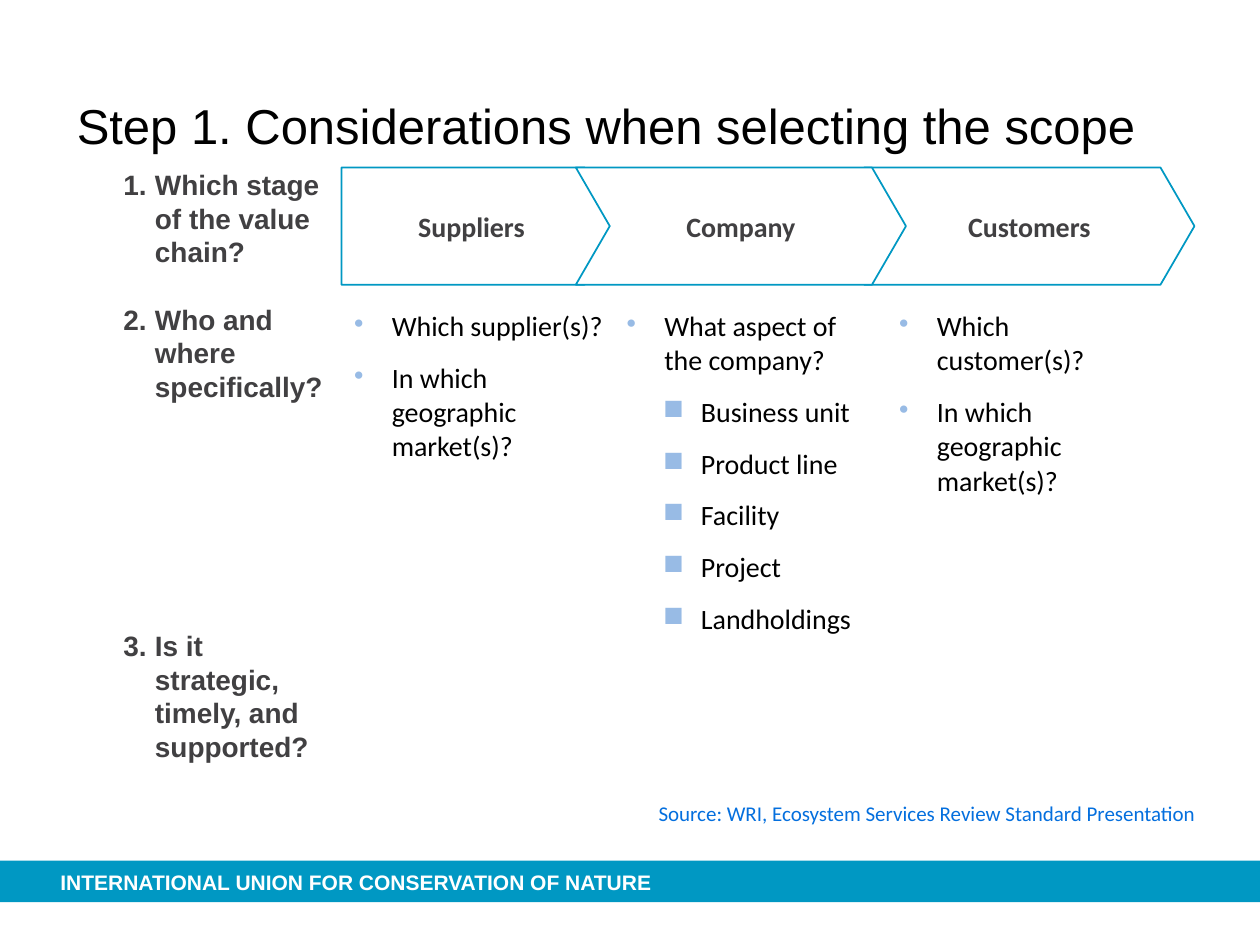
import pptx
import pptx.util
import pptx.dml.color
import pptx.enum.shapes
import pptx.enum.text
import pptx.oxml.ns
import lxml.etree
from dataclasses import dataclass

Pt = pptx.util.Pt
Shape = pptx.enum.shapes.MSO_SHAPE
Align = pptx.enum.text.PP_ALIGN
Anchor = pptx.enum.text.MSO_ANCHOR


@dataclass(frozen=True)
class Theme:
    blue: str = "0098C3"
    pale: str = "98BBE5"
    link: str = "046FDE"
    gray: str = "414042"
    black: str = "000000"
    white: str = "FFFFFF"
    head: str = "Arial"
    body: str = "Calibri"
    big: int = 28
    mid: int = 16
    small: int = 12


def rgb(hue):
    return pptx.dml.color.RGBColor.from_string(hue)


def grid(*cells):
    return [pptx.util.Inches(cell / 10) for cell in cells]


def apply(item, values):
    for name, value in values.items():
        setattr(item, name, value)


class Deck:
    def __init__(self, theme, cols, rows):
        self.theme = theme
        self.prs = pptx.Presentation()
        self.prs.slide_width, self.prs.slide_height = grid(cols, rows)
        self.slide = self.prs.slides.add_slide(self.prs.slide_layouts[6])

    def label(self, para, words, face, size, hue, bold=False):
        run = para.add_run()
        run.text = words
        apply(run.font, {"name": face, "size": Pt(size), "bold": bold})
        run.font.color.rgb = rgb(hue)

    def indent(self, para, left, hang):
        props = para._p.get_or_add_pPr()
        props.set("marL", str(grid(left)[0]))
        props.set("indent", str(-grid(hang)[0]))
        return props

    def frame(self, frame, anchor):
        apply(frame, {"word_wrap": True, "vertical_anchor": anchor,
                      "margin_left": 0, "margin_right": 0,
                      "margin_top": 0, "margin_bottom": 0})
        return frame.paragraphs[0]

    def text(self, place, words, *style, align=Align.LEFT, anchor=Anchor.TOP):
        box = self.slide.shapes.add_textbox(*grid(*place))
        para = self.frame(box.text_frame, anchor)
        para.alignment = align
        self.label(para, words, *style)
        return para

    def shape(self, kind, place, fill, line=None):
        item = self.slide.shapes.add_shape(kind, *grid(*place))
        item.shadow.inherit = False
        item.fill.solid()
        item.fill.fore_color.rgb = rgb(fill)
        if line:
            item.line.color.rgb = rgb(line)
            item.line.width = Pt(1)
        else:
            item.line.fill.background()
        return item

    def stage(self, kind, place, words):
        look = self.theme
        item = self.shape(kind, place, look.white, look.blue)
        item.adjustments[0] = 0.29
        para = self.frame(item.text_frame, Anchor.MIDDLE)
        para.alignment = Align.CENTER
        self.label(para, words, look.body, look.mid, look.gray, True)

    def ask(self, row, high, number, words):
        look = self.theme
        para = self.text((9.8, row, 16.1, high), f"{number}. \t{words}",
                         look.head, look.mid, look.gray, True)
        self.indent(para, 2.5, 2.5)

    def bullet(self, para, words, deep, first):
        look = self.theme
        name = pptx.oxml.ns.qn
        para.level = 4 if deep else 3
        para.space_before = Pt(0 if first else 5)
        para.space_after = Pt(5)
        props = self.indent(para, 5.9 if deep else 3, 3)
        color = lxml.etree.SubElement(props, name("a:buClr"))
        lxml.etree.SubElement(color, name("a:srgbClr"), val=look.pale)
        lxml.etree.SubElement(props, name("a:buChar"), char="■" if deep else "•")
        self.label(para, words, look.body, look.mid, look.black)

    def table(self, place, lists):
        table = self.slide.shapes.add_table(1, len(lists), *grid(*place)).table
        apply(table, {"first_row": False, "horz_banding": False})
        side, edge = grid(0.8, 0.6)
        for cell, items in zip(table.rows[0].cells, lists):
            cell.fill.background()
            apply(cell, {"margin_left": side, "margin_right": side,
                         "margin_top": edge, "margin_bottom": edge})
            frame = cell.text_frame
            for spot, (words, deep) in enumerate(items):
                para = frame.add_paragraph() if spot else frame.paragraphs[0]
                self.bullet(para, words, deep, spot == 0)


def main():
    look = Theme()
    deck = Deck(look, 100, 75)

    deck.shape(Shape.RECTANGLE, (0, 68.3, 100, 3.3), look.blue)
    deck.text((4.8, 69, 56, 2), "INTERNATIONAL UNION FOR CONSERVATION OF NATURE",
              look.head, look.small, look.white, True, anchor=Anchor.MIDDLE)
    deck.text((6.1, 7.6, 86, 8.7), "Step 1. Considerations when selecting the scope",
              look.head, look.big, look.black)

    asks = [(13.3, 8.1, "Which stage of the value chain?"),
            (24, 8.1, "Who and where specifically?"),
            (49.9, 10.8, "Is it strategic, timely, and supported?")]
    for number, (row, high, words) in enumerate(asks, 1):
        deck.ask(row, high, number, words)

    deck.stage(Shape.PENTAGON, (27.1, 13.3, 22, 9.3), "Suppliers")
    for step, words in ((1, "Customers"), (0, "Company")):
        deck.stage(Shape.CHEVRON, (45.7 + 22.9 * step, 13.3, 26.2, 9.3), words)

    market = ("In which geographic market(s)?", False)
    parts = ["Business unit", "Product line", "Facility", "Project", "Landholdings"]
    deck.table((27.3, 24, 64.9, 26.8), [
        [("Which supplier(s)?", False), market],
        [("What aspect of the company?", False)] + [(part, True) for part in parts],
        [("Which customer(s)?", False), market],
    ])

    deck.text((10.6, 63.5, 84.3, 2),
              "Source: WRI, Ecosystem Services Review Standard Presentation",
              look.body, look.small, look.link, align=Align.RIGHT)
    deck.prs.save("out.pptx")


if __name__ == "__main__":
    main()
